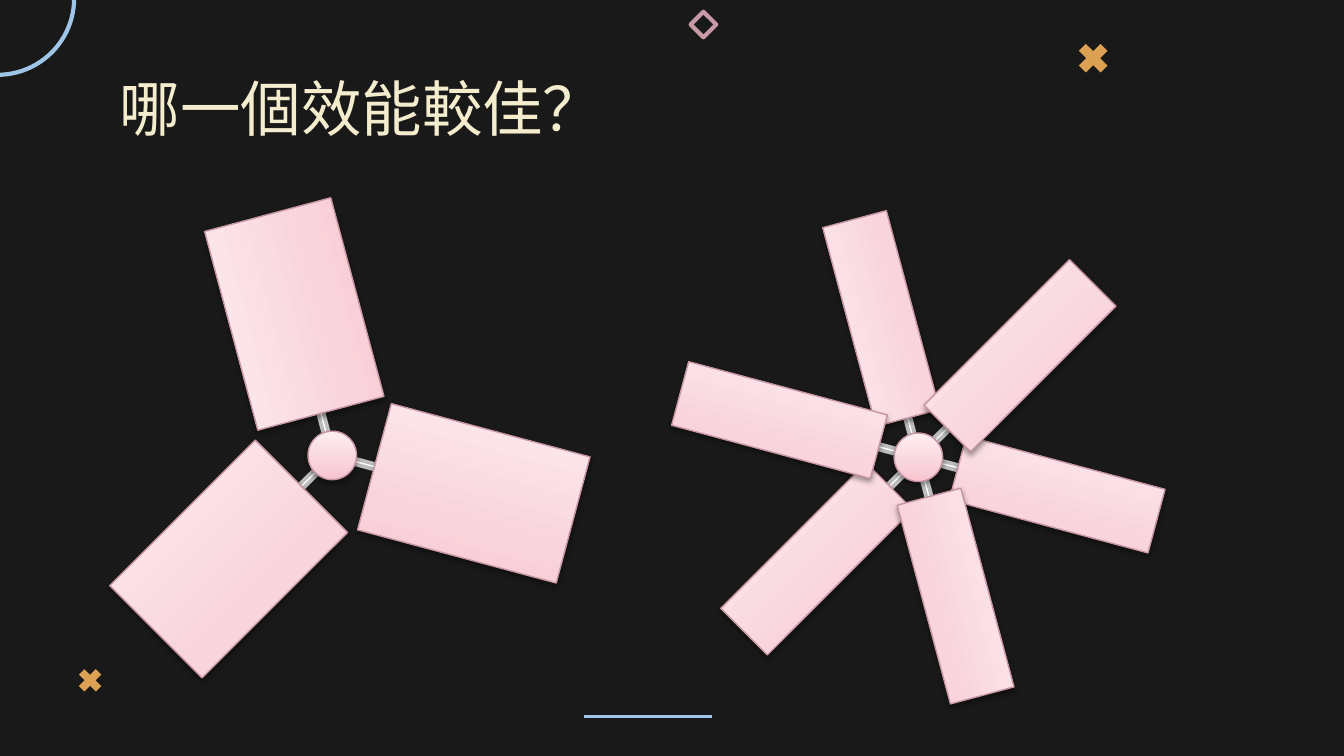
import math

import lxml.etree
import pptx
import pptx.dml.color
import pptx.enum.shapes
import pptx.enum.text
import pptx.oxml
import pptx.oxml.ns
import pptx.util

Pt = pptx.util.Pt
KIND = pptx.enum.shapes.MSO_SHAPE
TEXT = pptx.enum.text
FONT = "Noto Sans CJK JP"
HUE = {
    "back": "191919", "title": "F3ECCD", "gold": "DCA153", "sky": "9FC5E8",
    "rose": "C89AA5", "rod": "FFFFFF", "steel": "BDBDBD", "edge": "C595A1",
    "deep": "F7C3CE", "mid": "F9D4DC", "pale": "FDEEF1", "shade": "000000",
}
STOPS = [(0, "deep"), (35, "mid"), (100, "pale")]
SPACE = pptx.oxml.ns.nsdecls("a")


def paint(name):
    return pptx.dml.color.RGBColor.from_string(HUE[name])


def apply(item, form):
    for key, value in form.items():
        setattr(item, key, value)


def stroke(line, name, width):
    line.color.rgb = paint(name)
    line.width = Pt(width)


def draw(shapes, kind, box, fill=None, line=None, spin=0):
    shape = shapes.add_shape(kind, *map(Pt, box))
    shape.shadow.inherit = False
    shape.rotation = spin
    if fill:
        shape.fill.solid()
        shape.fill.fore_color.rgb = paint(fill)
    else:
        shape.fill.background()
    if line:
        stroke(shape.line, *line)
    else:
        shape.line.fill.background()
    return shape


def mount(shapes, kind, mid, size, spin=0, **look):
    (x, y), (w, h) = mid, size
    return draw(shapes, kind, (x - w / 2, y - h / 2, w, h), spin=spin, **look)


def gloss(shape):
    props = shape.fill._xPr
    stops = "".join(
        f'<a:gs pos="{pos * 1000}"><a:srgbClr val="{HUE[name]}"/></a:gs>'
        for pos, name in STOPS)
    grad = pptx.oxml.parse_xml(
        f'<a:gradFill {SPACE} rotWithShape="1"><a:gsLst>{stops}</a:gsLst>'
        '<a:lin ang="16200000" scaled="0"/></a:gradFill>')
    props.replace(props.find(pptx.oxml.ns.qn("a:solidFill")), grad)
    glow = props.find(pptx.oxml.ns.qn("a:effectLst"))
    glow.append(pptx.oxml.parse_xml(
        f'<a:outerShdw {SPACE} blurRad="{Pt(3.1)}" dist="{Pt(1.6)}" '
        f'dir="5400000" rotWithShape="0"><a:srgbClr val="{HUE["shade"]}">'
        '<a:alpha val="38000"/></a:srgbClr></a:outerShdw>'))


def polar(hub, reach, angle):
    turn = math.radians(angle)
    return hub[0] + reach * math.cos(turn), hub[1] + reach * math.sin(turn)


def rotor(slide, box, rounds, depth, reach):
    left, top, width, height = box
    hub = left + width / 2, top + height / 2
    shapes = slide.shapes.add_group_shape().shapes
    pink = {"fill": "mid", "line": ("edge", 0.75)}
    for blades in rounds:
        for angle, spin in blades:
            mount(shapes, KIND.RECTANGLE, polar(hub, 65, angle), (114.5, 2.9),
                  angle, fill="rod", line=("steel", 2))
        for angle, spin in blades:
            gloss(mount(shapes, KIND.RECTANGLE, polar(hub, reach, angle),
                        (110.2, depth), spin, **pink))
    gloss(mount(shapes, KIND.OVAL, hub, (26, 26), **pink))


def trim(slide, box):
    left, top, width, height = box
    shapes = slide.shapes
    for x, y, side in [(574.5, 20, 22.4), (39.6, 355.8, 17.4)]:
        cross = draw(shapes, KIND.MATH_MULTIPLY,
                     (left + x, top + y, side, side), "gold")
        cross.adjustments[0] = 0.235
    arc = draw(shapes, KIND.ARC, (left - 42.3, top - 41.9, 82, 82),
               line=("sky", 2.25), spin=90)
    for spot, angle in enumerate((162, 0)):
        arc.adjustments[spot] = angle * 0.6
    draw(shapes, KIND.DIAMOND, (left + 370, top + 6.3, 13.7, 13.7),
         line=("rose", 2.25))
    level = Pt(top + 383.8)
    rule = shapes.add_connector(pptx.enum.shapes.MSO_CONNECTOR.STRAIGHT,
                                Pt(left + 312.8), level,
                                Pt(left + 381.4), level)
    stroke(rule.line, "sky", 1.5)
    lxml.etree.SubElement(rule._element.spPr, pptx.oxml.ns.qn("a:effectLst"))


def head(slide, box, words):
    title = slide.shapes.title
    apply(title, dict(zip(("left", "top", "width", "height"), map(Pt, box))))
    frame = title.text_frame
    frame.text = words
    apply(frame, {
        "word_wrap": True, "auto_size": TEXT.MSO_AUTO_SIZE.NONE,
        "vertical_anchor": TEXT.MSO_ANCHOR.TOP,
        "margin_left": Pt(7.2), "margin_right": Pt(7.2),
        "margin_top": Pt(7.2), "margin_bottom": Pt(7.2),
    })
    para = frame.paragraphs[0]
    apply(para, {"alignment": TEXT.PP_ALIGN.LEFT, "line_spacing": 0.9})
    run = para.runs[0]
    apply(run.font, {"name": FONT, "size": Pt(32.4)})
    run.font.color.rgb = paint("title")
    lxml.etree.SubElement(run.font._element, pptx.oxml.ns.qn("a:ea"),
                          typeface=FONT)


def main():
    deck = pptx.Presentation()
    apply(deck, {"slide_width": Pt(720), "slide_height": Pt(405)})
    slide = deck.slides.add_slide(deck.slide_layouts[5])
    slide.background.fill.solid()
    slide.background.fill.fore_color.rgb = paint("back")
    trim(slide, (0, 0, 720, 405))
    head(slide, (56.9, 35.3, 607, 45.4), "哪一個效能較佳？")
    first = [(15, 15), (135, 315), (255, 255)]
    second = [(75, 75), (195, 15), (315, 315)]
    rotor(slide, (48, 104, 260, 280), [first], 70, 78.5)
    rotor(slide, (352, 105, 280, 280), [first, second], 35.3, 77)
    deck.save("out.pptx")


if __name__ == "__main__":
    main()
